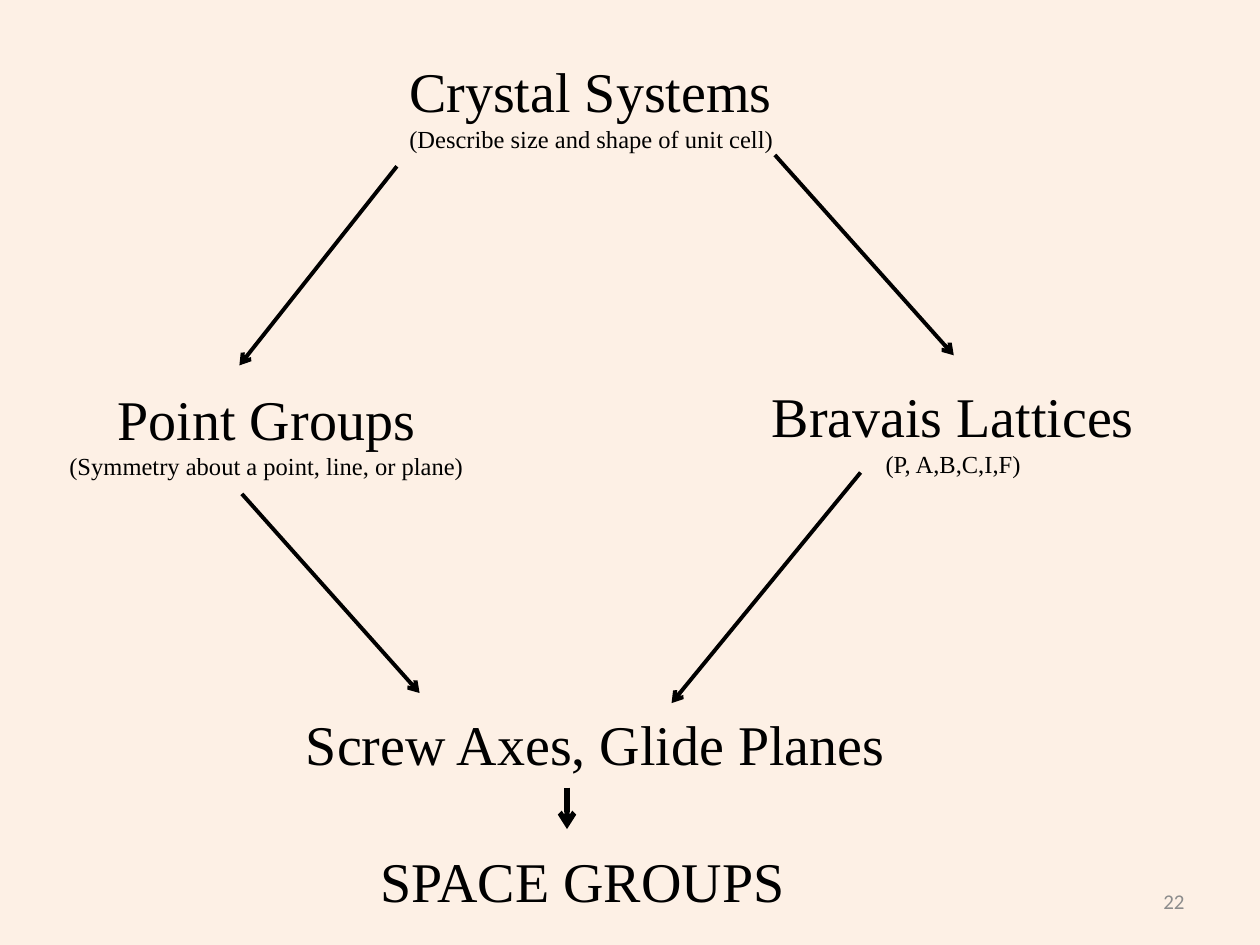
from lxml import etree
from pptx import Presentation, util as u
from pptx.dml.color import RGBColor
from pptx.enum import shapes, text
from pptx.oxml.ns import qn

PX = 9144  # 100 px to the inch
SERIF = "Times New Roman"
BLACK = "000000"
LEFT, CENTER, RIGHT = text.PP_ALIGN.LEFT, text.PP_ALIGN.CENTER, text.PP_ALIGN.RIGHT


def add_text(box, lines, align, font_name, color):
    """Add a text box; lines holds (wording, point size) pairs, one per paragraph."""
    shape = slide.shapes.add_textbox(*(value * PX for value in box))
    frame = shape.text_frame
    frame.word_wrap = False
    for index, (wording, size) in enumerate(lines):
        paragraph = frame.paragraphs[0] if index == 0 else frame.add_paragraph()
        paragraph.alignment = align
        run = paragraph.add_run()
        run.text = wording
        run.font.name = font_name
        run.font.size = u.Pt(size)
        run.font.color.rgb = RGBColor.from_string(color)
    return frame


presentation = Presentation()
presentation.slide_width = 1000 * PX
presentation.slide_height = 750 * PX
slide = presentation.slides.add_slide(presentation.slide_layouts[6])
slide.background.fill.solid()
slide.background.fill.fore_color.rgb = RGBColor.from_string("FDF0E5")

# Concepts: box, alignment, heading, optional explanation
concepts = [
    ((315, 40, 317, 88), LEFT, "Crystal Systems", "(Describe size and shape of unit cell)"),
    ((42, 300, 339, 88), CENTER, "Point Groups", "(Symmetry about a point, line, or plane)"),
    ((601, 298, 311, 88), CENTER, "Bravais Lattices", "(P, A,B,C,I,F)"),
    ((233, 558, 484, 64), LEFT, "Screw Axes, Glide Planes", None),
    ((292, 667, 344, 64), LEFT, "SPACE GROUPS", None),
]
for box, align, heading, explanation in concepts:
    lines = [(heading, 32)]
    if explanation:
        lines.append((explanation, 14))
    frame = add_text(box, lines, align, SERIF, BLACK)
    frame.auto_size = text.MSO_AUTO_SIZE.SHAPE_TO_FIT_TEXT

# Arrows: start x, start y, end x, end y, line width in points
arrows = [
    (315, 132, 190, 290, 2.25),
    (615, 123, 757, 282, 2.25),
    (192, 392, 333, 550, 2.25),
    (683, 375, 533, 558, 2.25),
    (450, 625, 450, 658, 3),
]
for *ends, width in arrows:
    arrow = slide.shapes.add_connector(
        shapes.MSO_CONNECTOR.STRAIGHT, *(value * PX for value in ends))
    arrow.line.width = u.Pt(width)
    arrow.line.color.rgb = RGBColor.from_string(BLACK)
    etree.SubElement(arrow.line._get_or_add_ln(), qn("a:tailEnd"), type="arrow")
    etree.SubElement(arrow._element.spPr, qn("a:effectLst"))

page_number = add_text((717, 695, 233, 40), [("22", 12)], RIGHT, "Calibri", "8C8C8C")
page_number.word_wrap = True
page_number.vertical_anchor = text.MSO_ANCHOR.MIDDLE

presentation.save("out.pptx")
